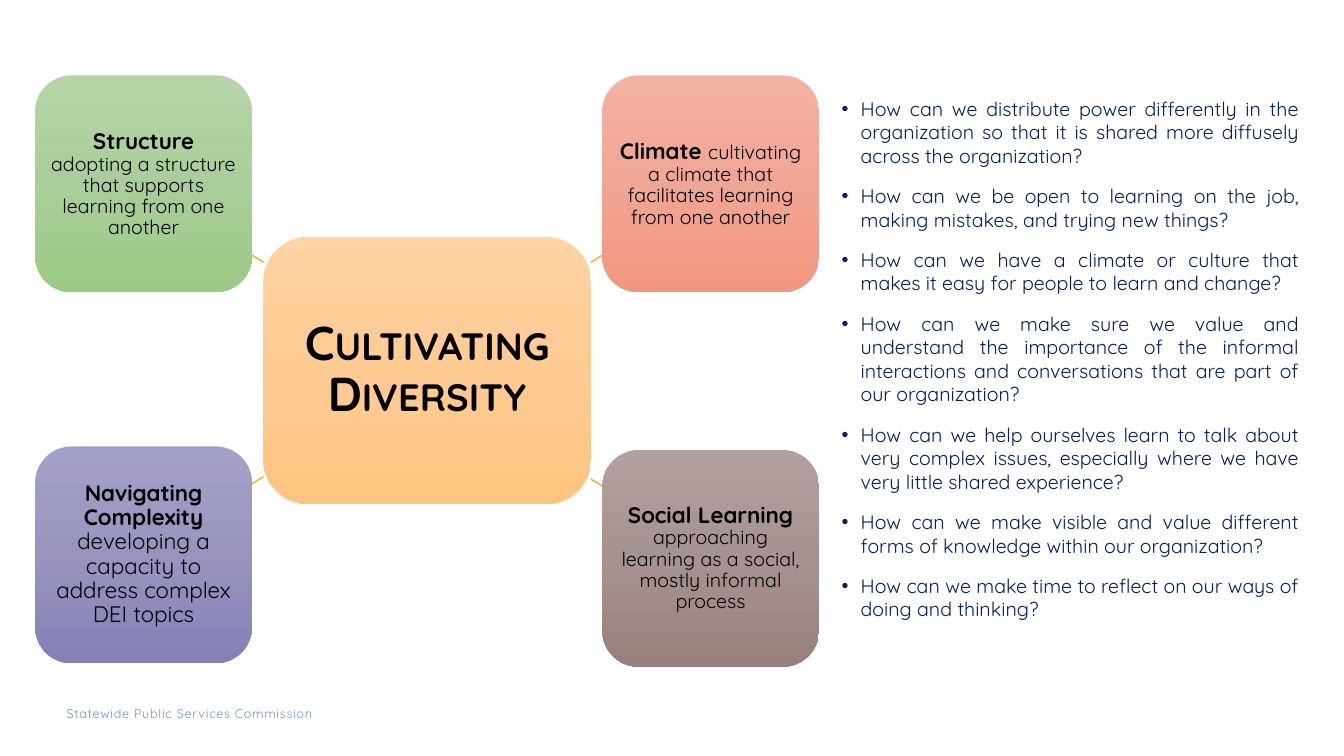
from copy import deepcopy
from dataclasses import dataclass

from lxml import etree
from pptx import Presentation
from pptx.dml.color import RGBColor
from pptx.enum.shapes import MSO_CONNECTOR, MSO_SHAPE
from pptx.enum.text import MSO_ANCHOR, PP_ALIGN
from pptx.oxml.ns import qn
from pptx.shapes.autoshape import Shape
from pptx.slide import Slide
from pptx.text.text import TextFrame, _Paragraph, _Run
from pptx.util import Cm, Pt

ROUNDED = MSO_SHAPE.ROUNDED_RECTANGLE
STRAIGHT = MSO_CONNECTOR.STRAIGHT
MIDDLE = MSO_ANCHOR.MIDDLE
CENTER = PP_ALIGN.CENTER
JUSTIFY = PP_ALIGN.JUSTIFY

FONT = "Quicksand"
BLACK = RGBColor(0x00, 0x00, 0x00)
NAVY = RGBColor(0x00, 0x20, 0x60)
FOOTER_BLUE = RGBColor(0x69, 0x96, 0xC9)
LINK_ORANGE = RGBColor(0xFB, 0xAD, 0x22)
ORANGES = (RGBColor(0xFF, 0xD3, 0xA2), RGBColor(0xFE, 0xCB, 0x93), RGBColor(0xFF, 0xC5, 0x80))
GREENS = (RGBColor(0xB5, 0xD5, 0xA6), RGBColor(0xAA, 0xCE, 0x99), RGBColor(0x9C, 0xCA, 0x86))
CORALS = (RGBColor(0xF3, 0xB2, 0xA2), RGBColor(0xF0, 0xA6, 0x94), RGBColor(0xF3, 0x96, 0x7F))
PURPLES = (RGBColor(0xA4, 0xA1, 0xC8), RGBColor(0x98, 0x94, 0xBE), RGBColor(0x85, 0x80, 0xB6))
BROWNS = (RGBColor(0xB1, 0xA0, 0x9E), RGBColor(0xA5, 0x93, 0x91), RGBColor(0x99, 0x80, 0x7C))

CARD_SIZE = 5.46
LEFT_COLUMN, RIGHT_COLUMN = 0.89, 15.18
LINK_RISE = 0.18


@dataclass(frozen=True)
class Span:
    text: str
    size: float
    bold: bool = False


@dataclass(frozen=True)
class Card:
    left: float
    top: float
    colors: tuple[RGBColor, RGBColor, RGBColor]
    spans: tuple[Span, ...]
    link_y: float = 0
    width: float = CARD_SIZE
    height: float = CARD_SIZE
    inset: float = 0.1


HUB = Card(6.64, 5.97, ORANGES, (Span("Cultivating Diversity", 34, True),),
           width=8.25, height=6.73, inset=0.23)

CARDS = (
    Card(LEFT_COLUMN, 1.9, GREENS, (
        Span("Structure", 16, True), Span(" ", 17),
        Span("adopting a structure that supports learning from one another", 14)), 6.61),
    Card(RIGHT_COLUMN, 1.9, CORALS, (
        Span("Climate", 16, True), Span(" ", 17),
        Span("cultivating a climate that facilitates learning from one another", 14)), 6.61),
    Card(LEFT_COLUMN, 11.25, PURPLES, (
        Span("Navigating Complexity ", 16, True),
        Span("developing a capacity to address complex DEI topics", 16)), 12.01),
    Card(RIGHT_COLUMN, 11.34, BROWNS, (
        Span("Social Learning ", 16, True),
        Span("approaching learning as a social, mostly informal process", 14)), 12.07),
)

QUESTIONS = (
    "How can we distribute power differently in the organization so that it is shared "
    "more diffusely across the organization?",
    "How can we be open to learning on the job, making mistakes, and trying new things?",
    "How can we have a climate or culture that makes it easy for people to learn and change?",
    "How can we make sure we value and understand the importance of the informal "
    "interactions and conversations that are part of our organization?",
    "How can we help ourselves learn to talk about very complex issues, especially where "
    "we have very little shared experience?",
    "How can we make visible and value different forms of knowledge within our organization?",
    "How can we make time to reflect on our ways of doing and thinking?",
)


def add_span(para: _Paragraph, span: Span, color: RGBColor) -> _Run:
    run = para.add_run()
    run.text = span.text
    run.font.name = FONT
    run.font.size = Pt(span.size)
    run.font.bold = span.bold
    run.font.color.rgb = color
    return run


def set_insets(frame: TextFrame, inset: float) -> None:
    frame.margin_left = frame.margin_right = Cm(inset)
    frame.margin_top = frame.margin_bottom = Cm(inset)


def fill_gradient(box: Shape, colors: tuple[RGBColor, ...]) -> None:
    box.fill.gradient()
    box.fill.gradient_angle = 270
    stop_list = box._element.spPr.find(".//" + qn("a:gsLst"))
    stop_list.insert(1, deepcopy(stop_list[0]))
    for index, (stop, color) in enumerate(zip(box.fill.gradient_stops, colors)):
        stop.position = index / 2
        stop.color.rgb = color


def add_card(page: Slide, card: Card) -> _Paragraph:
    box = page.shapes.add_shape(ROUNDED, Cm(card.left), Cm(card.top),
                                Cm(card.width), Cm(card.height))
    box.shadow.inherit = False
    box.line.fill.background()
    fill_gradient(box, card.colors)
    frame = box.text_frame
    frame.word_wrap = True
    frame.vertical_anchor = MIDDLE
    set_insets(frame, card.inset)
    para = frame.paragraphs[0]
    para.alignment = CENTER
    para.line_spacing = 0.9
    for span in card.spans:
        add_span(para, span, BLACK)
    return para


def add_link(page: Slide, card: Card) -> None:
    if card.left < HUB.left:
        hub_x, card_x = HUB.left, card.left + card.width
    else:
        hub_x, card_x = HUB.left + HUB.width, card.left
    rise = LINK_RISE if card.top < HUB.top else -LINK_RISE
    link = page.shapes.add_connector(STRAIGHT, Cm(hub_x), Cm(card.link_y),
                                     Cm(card_x), Cm(card.link_y - rise))
    link.line.color.rgb = LINK_ORANGE
    link.line.width = Pt(1)
    etree.SubElement(link._element.spPr, qn("a:effectLst"))


def add_questions(page: Slide) -> None:
    box = page.shapes.add_textbox(Cm(20.65), Cm(2.31), Cm(12.34), Cm(14.43))
    frame = box.text_frame
    frame.word_wrap = True
    for index, question in enumerate(QUESTIONS):
        para = frame.add_paragraph() if index else frame.paragraphs[0]
        para.alignment = JUSTIFY
        para.space_after = Pt(12)
        add_span(para, Span(question, 14), NAVY)
        properties = para._p.get_or_add_pPr()
        properties.set("marL", str(Cm(0.79)))
        properties.set("indent", str(Cm(-0.48)))
        etree.SubElement(properties, qn("a:buFont"), typeface="Arial")
        etree.SubElement(properties, qn("a:buChar"), char="•")


def add_footer(page: Slide) -> None:
    box = page.shapes.add_textbox(Cm(1.68), Cm(17.78), Cm(8.15), Cm(0.38))
    frame = box.text_frame
    frame.word_wrap = True
    set_insets(frame, 0)
    run = add_span(frame.paragraphs[0], Span("Statewide Public Services Commission", 9), FOOTER_BLUE)
    run.font._element.set("spc", "50")


def main() -> None:
    deck = Presentation()
    deck.slide_width, deck.slide_height = Cm(33.87), Cm(19.05)
    page = deck.slides.add_slide(deck.slide_layouts[6])
    add_footer(page)
    title = add_card(page, HUB)
    title.runs[0].font._element.set("cap", "small")
    for card in CARDS:
        add_link(page, card)
        add_card(page, card)
    add_questions(page)
    deck.save("out.pptx")


if __name__ == "__main__":
    main()
